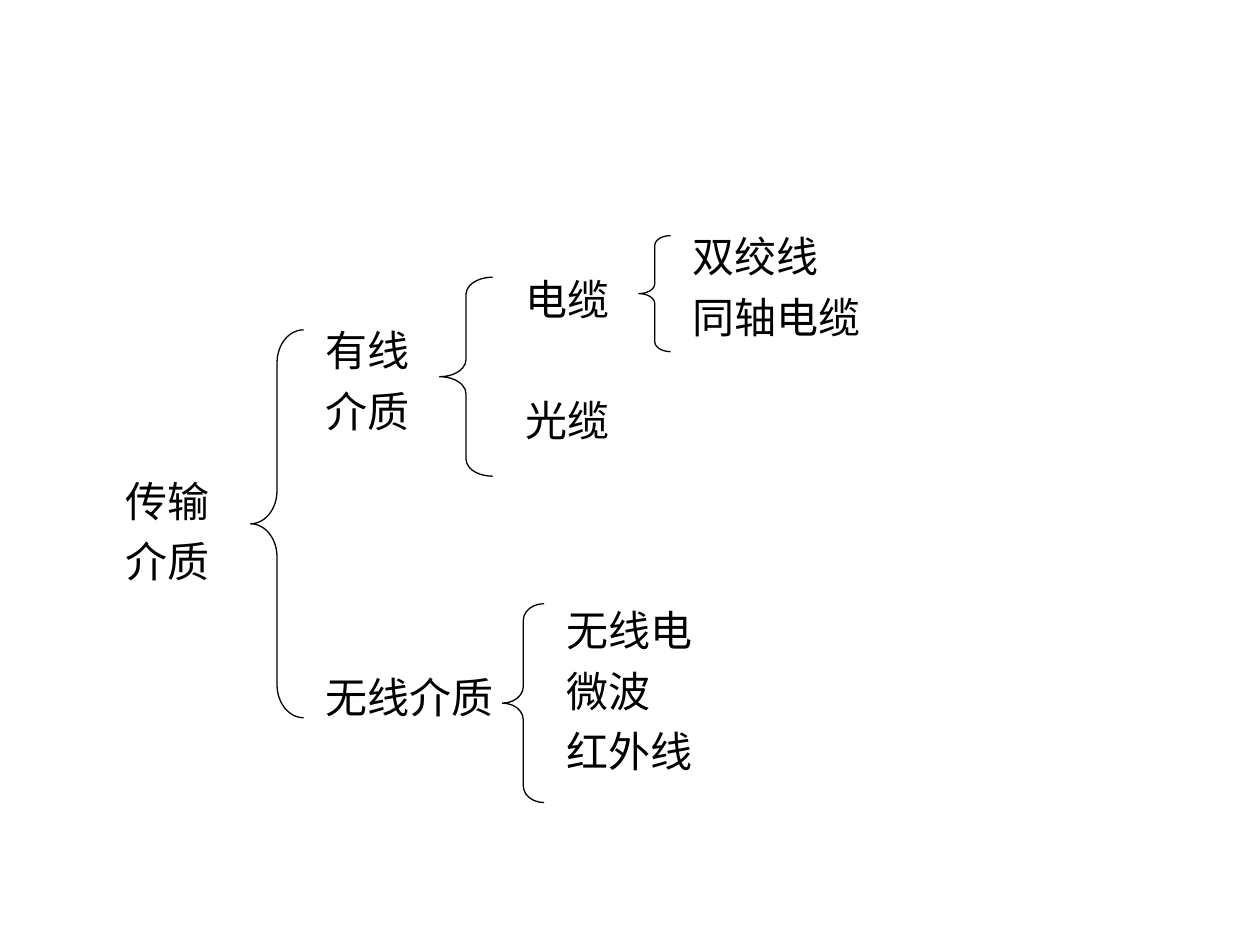
from dataclasses import dataclass

from pptx import Presentation
from pptx.dml.color import RGBColor
from pptx.enum.shapes import MSO_SHAPE as Shape
from pptx.enum.text import MSO_AUTO_SIZE as AutoSize
from pptx.slide import Slide
from pptx.util import Cm, Pt


@dataclass(frozen=True)
class Theme:
    """Colours, font and sizes of the slide."""
    ink: RGBColor = RGBColor(0, 0, 0)
    font: str = "Arial"
    size: float = 24
    spacing: float = 1.2
    line: float = 0.75


@dataclass(frozen=True)
class Label:
    """A branch of the tree, one paragraph per item, in centimetres."""
    items: tuple[str, ...]
    left: float
    top: float
    width: float
    height: float
    gap: float = 0


@dataclass(frozen=True)
class Brace:
    """A left brace in centimetres with the curl of its ends."""
    left: float
    top: float
    width: float
    height: float
    curl: float


THEME = Theme()

LABELS = (
    Label(("传输介质",), 2.29, 9.25, 2.74, 2.59),
    Label(("有线介质",), 6.32, 6.22, 2.54, 2.59),
    Label(("无线介质",), 6.32, 13.21, 4.65, 1.37),
    Label(("电缆", "光缆"), 10.34, 5.18, 2.54, 3.84, gap=34.5),
    Label(("双绞线", "同轴电缆"), 13.72, 4.32, 4.01, 2.59),
    Label(("无线电", "微波", "红外线"), 11.18, 11.86, 4.45, 3.84),
)

BRACES = (
    Brace(5.05, 6.65, 1.07, 7.82, 0.62),
    Brace(8.86, 5.59, 1.07, 4.01, 0.32),
    Brace(12.88, 4.75, 0.64, 2.34, 0.31),
    Brace(10.13, 12.17, 0.84, 4.01, 0.4),
)


def write(p, text: str, *, size: float = THEME.size, font: str = THEME.font,
          color: RGBColor = THEME.ink, before: float = 0) -> None:
    """Write formatted text into a paragraph."""
    p.line_spacing = THEME.spacing
    p.space_before = Pt(before)
    r = p.add_run()
    r.text = text
    r.font.size = Pt(size)
    r.font.name = font
    r.font.color.rgb = color


def draw_label(s: Slide, label: Label) -> None:
    """Draw the text box of one branch."""
    box = s.shapes.add_textbox(Cm(label.left), Cm(label.top),
                               Cm(label.width), Cm(label.height))
    tf = box.text_frame
    tf.word_wrap = True
    tf.auto_size = AutoSize.SHAPE_TO_FIT_TEXT
    for i, item in enumerate(label.items):
        p = tf.add_paragraph() if i else tf.paragraphs[0]
        write(p, item, before=label.gap if i else 0)


def draw_brace(s: Slide, brace: Brace) -> None:
    """Draw one unfilled brace."""
    sp = s.shapes.add_shape(Shape.LEFT_BRACE, Cm(brace.left), Cm(brace.top),
                            Cm(brace.width), Cm(brace.height))
    sp.adjustments[0] = brace.curl
    sp.adjustments[1] = 0.5
    sp.shadow.inherit = False
    sp.fill.background()
    sp.line.color.rgb = THEME.ink
    sp.line.width = Pt(THEME.line)


def main() -> None:
    """Build the tree of transmission media."""
    prs = Presentation()
    prs.slide_width, prs.slide_height = Cm(25.4), Cm(19.05)
    s = prs.slides.add_slide(prs.slide_layouts[6])
    for label in LABELS:
        draw_label(s, label)
    for brace in BRACES:
        draw_brace(s, brace)
    prs.save("out.pptx")


if __name__ == "__main__":
    main()
